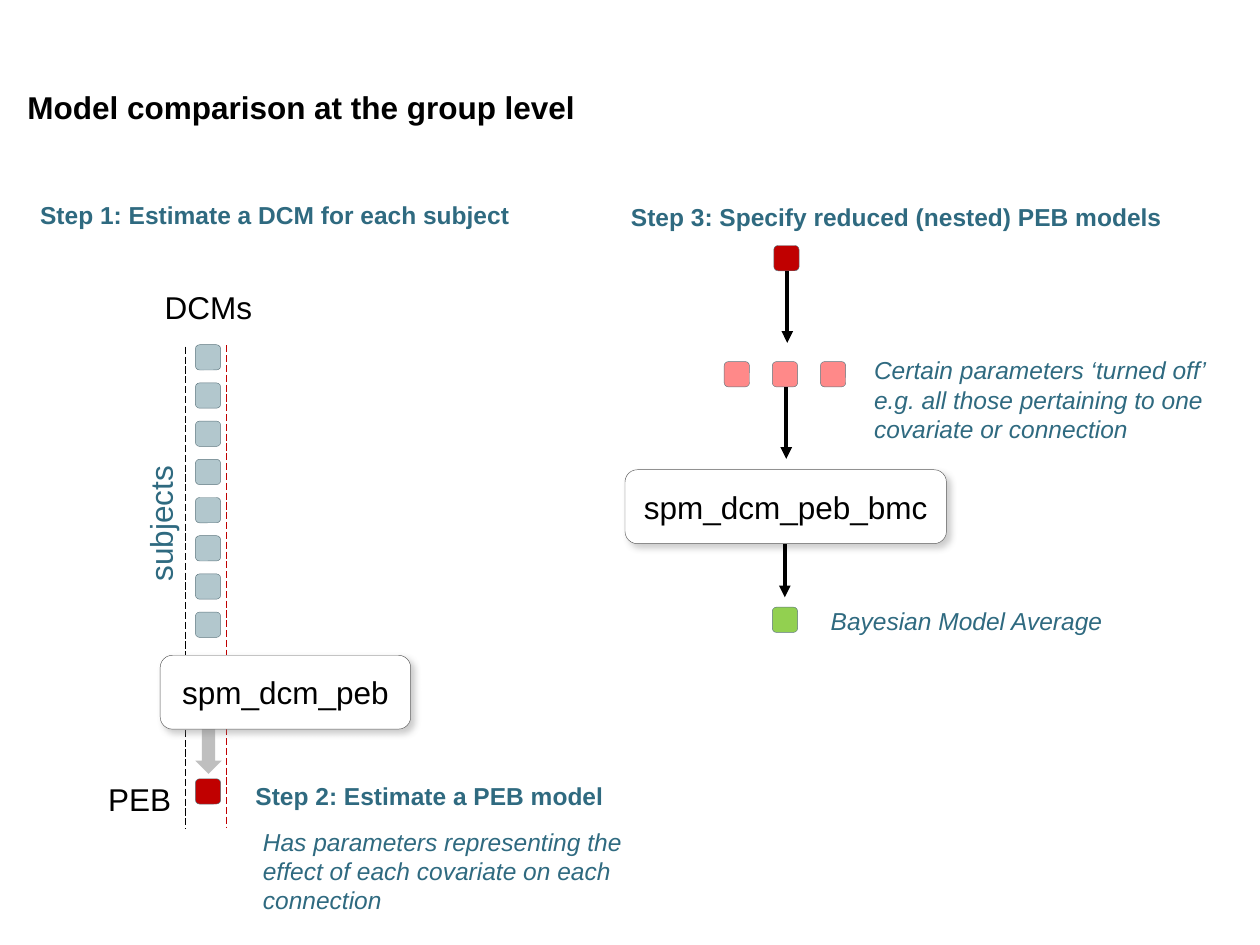
from lxml import etree
from pptx import Presentation
from pptx import util as u
from pptx.dml.color import RGBColor
from pptx.enum import dml, shapes, text
from pptx.oxml import parse_xml
from pptx.oxml.ns import nsdecls, qn

COLORS = {
    "black": "000000", "white": "FFFFFF", "teal": "2F6A80", "subject": "B2C7CD",
    "edge": "5E777F", "peb": "C00000", "reduced": "FF8989", "average": "92D050",
    "arrow": "BFBFBF", "box_edge": "595959", "shadow": "808080",
}
TITLE = ("Model comparison at the group level", 0.3, 1.65, 11.66, 1.02)
STEPS = [
    ("Step 1: Estimate a DCM for each subject", 0.56, 3.91, 10.01, 0.86),
    ("Step 2: Estimate a PEB model", 4.9, 15.62, 7.57, 0.86),
    ("Step 3: Specify reduced (nested) PEB models", 12.47, 3.94, 11.25, 0.86),
]
LABELS = [
    ("subjects", 1.8, 10.03, 2.87, 1.02, "teal", 270),
    ("DCMs", 3.07, 5.69, 2.29, 1.02, "black", 0),
    ("PEB", 1.93, 15.6, 1.8, 1.02, "black", 0),
]
NOTES = [
    ("Has parameters representing the effect of each covariate on each connection",
     5.05, 16.54, 8.2, 2.06, "LEFT"),
    ("Certain parameters ‘turned off’\n"
     "e.g. all those pertaining to one covariate or connection",
     17.37, 7.04, 8.33, 2.06, "LEFT"),
    ("Bayesian Model Average", 16.31, 12.09, 6.35, 0.86, "CENTER"),
]
FUNCTIONS = [
    ("spm_dcm_peb", 3.23, 13.21, 5.05),
    ("spm_dcm_peb_bmc", 12.6, 9.47, 6.48),
]
SUBJECTS, SUBJECT_LEFT, SUBJECT_TOP, SUBJECT_PITCH = 8, 3.94, 6.95, 0.77
REDUCED, REDUCED_LEFT, REDUCED_TOP, REDUCED_PITCH = 3, 14.6, 7.29, 0.97
SQUARE, BOX_HEIGHT = 0.51, 1.49
MODELS = [(3.94, 15.7, "peb"), (15.6, 4.95, "peb"), (15.57, 12.24, "average")]
GUIDES = [(4.57, 6.96, 16.69, "peb"), (3.73, 6.99, 16.71, "black")]
ARROWS = [(15.87, 5.46, 6.91), (15.85, 7.8, 9.25), (15.82, 10.97, 12.04)]


def rgb(name):
    return RGBColor.from_string(COLORS[name])


def add_preset(slide, preset, left, top, width, height, fill, edge=None):
    shape = slide.shapes.add_shape(preset, *map(u.Cm, (left, top, width, height)))
    shape.shadow.inherit = False
    shape.fill.solid()
    shape.fill.fore_color.rgb = rgb(fill)
    if edge:
        shape.line.color.rgb = rgb(edge)
        shape.line.width = u.Pt(0.25)
    else:
        shape.line.fill.background()
    return shape


def add_square(slide, left, top, fill):
    add_preset(slide, shapes.MSO_SHAPE.ROUNDED_RECTANGLE, left, top, SQUARE, SQUARE, fill, "edge")


def write(frame, wording, size, color, align="LEFT", bold=False, italic=False):
    frame.text = wording
    for paragraph in frame.paragraphs:
        paragraph.alignment = text.PP_ALIGN[align]
        font = paragraph.font
        font.name, font.size = "Arial", u.Pt(size)
        font.bold, font.italic = bold, italic
        font.color.rgb = rgb(color)


def add_text(slide, wording, place, size, color, wrap=False, **style):
    box = slide.shapes.add_textbox(*map(u.Cm, place))
    box.text_frame.word_wrap = wrap
    box.text_frame.auto_size = text.MSO_AUTO_SIZE.SHAPE_TO_FIT_TEXT
    write(box.text_frame, wording, size, color, **style)
    return box


def add_vertical(slide, x, top, bottom, color, width):
    line = slide.shapes.add_connector(
        shapes.MSO_CONNECTOR.STRAIGHT, *map(u.Cm, (x, top, x, bottom)))
    line.line.color.rgb = rgb(color)
    line.line.width = u.Pt(width)
    etree.SubElement(line._element.spPr, qn("a:effectLst"))
    return line


def add_function(slide, name, left, top, width):
    box = add_preset(slide, shapes.MSO_SHAPE.ROUNDED_RECTANGLE,
                     left, top, width, BOX_HEIGHT, "white", "box_edge")
    box.text_frame.word_wrap = False
    box.text_frame.vertical_anchor = text.MSO_ANCHOR.MIDDLE
    write(box.text_frame, name, 18, "black", "CENTER")
    box._element.spPr.find(qn("a:effectLst")).append(parse_xml(
        f'<a:outerShdw {nsdecls("a")} blurRad="{u.Pt(4)}" dist="{u.Pt(3)}" dir="2700000" '
        f'algn="tl" rotWithShape="0"><a:srgbClr val="{COLORS["shadow"]}">'
        '<a:alpha val="40000"/></a:srgbClr></a:outerShdw>'))


def main():
    """Build the group-level model comparison slide."""
    deck = Presentation()
    deck.slide_width, deck.slide_height = u.Cm(25.4), u.Cm(19.05)
    slide = deck.slides.add_slide(deck.slide_layouts[5])

    heading = slide.shapes.title
    wording, *place = TITLE
    heading.left, heading.top, heading.width, heading.height = map(u.Cm, place)
    heading.text_frame.word_wrap = False
    heading.text_frame.auto_size = text.MSO_AUTO_SIZE.NONE
    heading.text_frame.vertical_anchor = text.MSO_ANCHOR.TOP
    write(heading.text_frame, wording, 18, "black", bold=True)

    for i in range(SUBJECTS):
        add_square(slide, SUBJECT_LEFT, SUBJECT_TOP + i * SUBJECT_PITCH, "subject")
    for i in range(REDUCED):
        add_square(slide, REDUCED_LEFT + i * REDUCED_PITCH, REDUCED_TOP, "reduced")
    for model in MODELS:
        add_square(slide, *model)

    for guide in GUIDES:
        add_vertical(slide, *guide, 0.5).line.dash_style = dml.MSO_LINE.LONG_DASH
    add_preset(slide, shapes.MSO_SHAPE.DOWN_ARROW, 3.94, 14.61, 0.53, 0.99, "arrow")
    for function in FUNCTIONS:
        add_function(slide, *function)
    for arrow in ARROWS:
        line = add_vertical(slide, *arrow, "black", 2.25)
        etree.SubElement(line.line._get_or_add_ln(), qn("a:tailEnd"), type="triangle")

    for wording, *place in STEPS:
        add_text(slide, wording, place, 14, "teal", bold=True)
    for wording, *place, color, rotation in LABELS:
        add_text(slide, wording, place, 18, color).rotation = rotation
    for wording, *place, align in NOTES:
        add_text(slide, wording, place, 14, "teal", wrap=True, align=align, italic=True)

    deck.save("out.pptx")


if __name__ == "__main__":
    main()
